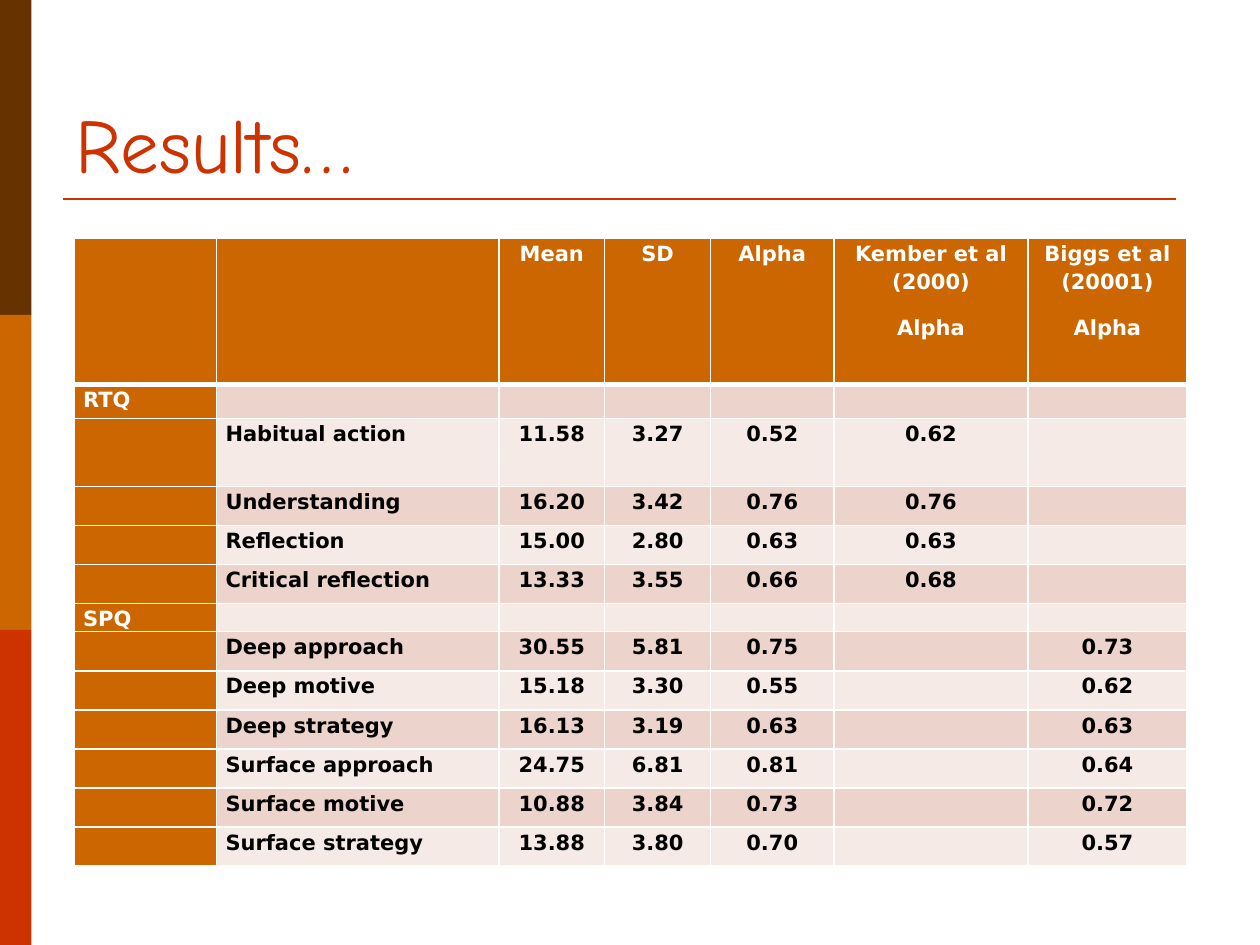
"""Build the Results slide: a table of questionnaire scale statistics."""
from dataclasses import dataclass

from lxml.etree import SubElement
from pptx import Presentation
from pptx.dml.color import RGBColor as Rgb
from pptx.enum.shapes import MSO_CONNECTOR as Connector, MSO_SHAPE as Shape
from pptx.enum.text import MSO_ANCHOR as Anchor, PP_ALIGN as Align
from pptx.oxml.ns import qn
from pptx.util import Inches, Pt


@dataclass(frozen=True)
class Theme:
    brown: str = "663300"
    orange: str = "CC6600"
    red: str = "CC3300"
    white: str = "FFFFFF"
    black: str = "000000"
    bands: tuple[str, str] = ("ECD3CC", "F6EAE7")
    title_font: str = "Comic Neue"
    table_font: str = "DejaVu Sans"
    title_size: int = 44
    table_size: int = 12
    rule: float = 1.5
    grid: int = 1
    header_rule: int = 3


@dataclass(frozen=True)
class Scale:
    name: str
    mean: str
    sd: str
    alpha: str
    kember: str = ""
    biggs: str = ""
    height: float = 0.31

    def cells(self) -> tuple[str, ...]:
        return "", self.name, self.mean, self.sd, self.alpha, self.kember, self.biggs


@dataclass(frozen=True)
class Section:
    name: str
    height: float

    def cells(self) -> tuple[str, ...]:
        return (self.name,) + ("",) * 6


THEME = Theme()
COLUMN_WIDTHS = (1.13, 2.24, 0.84, 0.84, 0.98, 1.54, 1.26)
HEADER_HEIGHT = 1.16
HEADINGS = ("", "", "Mean", "SD", "Alpha", "Kember et al (2000)\nAlpha", "Biggs et al (20001)\nAlpha")
ROWS = (
    Section("RTQ", 0.27),
    Scale("Habitual action", "11.58", "3.27", "0.52", kember="0.62", height=0.54),
    Scale("Understanding", "16.20", "3.42", "0.76", kember="0.76"),
    Scale("Reflection", "15.00", "2.80", "0.63", kember="0.63"),
    Scale("Critical reflection", "13.33", "3.55", "0.66", kember="0.68"),
    Section("SPQ", 0.22),
    Scale("Deep approach", "30.55", "5.81", "0.75", biggs="0.73"),
    Scale("Deep motive", "15.18", "3.30", "0.55", biggs="0.62"),
    Scale("Deep strategy", "16.13", "3.19", "0.63", biggs="0.63"),
    Scale("Surface approach", "24.75", "6.81", "0.81", biggs="0.64"),
    Scale("Surface motive", "10.88", "3.84", "0.73", biggs="0.72"),
    Scale("Surface strategy", "13.88", "3.80", "0.70", biggs="0.57"),
)


def draw_side_bands(slide) -> None:
    for index, color in enumerate((THEME.brown, THEME.orange, THEME.red)):
        band = slide.shapes.add_shape(
            Shape.RECTANGLE, 0, Inches(2.5 * index), Inches(0.25), Inches(2.5))
        band.shadow.inherit = False
        band.fill.solid()
        band.fill.fore_color.rgb = Rgb.from_string(color)
        band.line.fill.background()


def draw_title_rule(slide) -> None:
    rule = slide.shapes.add_connector(
        Connector.STRAIGHT, Inches(0.5), Inches(1.58), Inches(9.33), Inches(1.58))
    rule.line.color.rgb = Rgb.from_string(THEME.red)
    rule.line.width = Pt(THEME.rule)
    SubElement(rule._element.spPr, qn("a:effectLst"))


def write_title(slide, text: str) -> None:
    title = slide.shapes.title
    title.left, title.top, title.width, title.height = map(Inches, (0.5, 0.3, 9, 1.25))
    title.text_frame.text = text
    title.text_frame.vertical_anchor = Anchor.BOTTOM
    heading = title.text_frame.paragraphs[0]
    heading.alignment = Align.LEFT
    heading.font.name = THEME.title_font
    heading.font.size = Pt(THEME.title_size)
    heading.font.color.rgb = Rgb.from_string(THEME.red)


def set_borders(cell, top: float, bottom: float) -> None:
    widths = {"a:lnL": THEME.grid, "a:lnR": THEME.grid, "a:lnT": top, "a:lnB": bottom}
    properties = cell._tc.get_or_add_tcPr()
    for tag, width in widths.items():
        border = SubElement(properties, qn(tag), w=str(Pt(width)))
        SubElement(SubElement(border, qn("a:solidFill")), qn("a:srgbClr"), val=THEME.white)


def write_cell(cell, text: str, color: str, alignment: Align) -> None:
    cell.margin_left = cell.margin_right = Inches(0.07)
    cell.margin_top = cell.margin_bottom = 0
    cell.text = text
    for paragraph in cell.text_frame.paragraphs:
        paragraph.alignment = alignment
        paragraph.line_spacing = 1.15
        paragraph.space_after = Pt(10)
        paragraph.font.name = THEME.table_font
        paragraph.font.size = Pt(THEME.table_size)
        paragraph.font.bold = True
        paragraph.font.color.rgb = Rgb.from_string(color)
        if not text:
            SubElement(paragraph._p, qn("a:endParaRPr"), sz=str(THEME.table_size * 100))


def draw_results(slide) -> None:
    heights = (HEADER_HEIGHT, *(row.height for row in ROWS))
    contents = (HEADINGS, *(row.cells() for row in ROWS))
    table = slide.shapes.add_table(
        len(contents), len(COLUMN_WIDTHS), Inches(0.59), Inches(1.89),
        Inches(sum(COLUMN_WIDTHS)), Inches(sum(heights))).table
    table.first_col = True
    for column, width in zip(table.columns, COLUMN_WIDTHS):
        column.width = Inches(width)
    for row_index, (height, texts) in enumerate(zip(heights, contents)):
        table.rows[row_index].height = Inches(height)
        for column_index, text in enumerate(texts):
            cell = table.cell(row_index, column_index)
            is_heading = row_index == 0 or column_index == 0
            set_borders(cell,
                        top=THEME.header_rule if row_index == 1 else THEME.grid,
                        bottom=THEME.header_rule if row_index == 0 else THEME.grid)
            cell.fill.solid()
            fill = THEME.orange if is_heading else THEME.bands[(row_index - 1) % 2]
            cell.fill.fore_color.rgb = Rgb.from_string(fill)
            write_cell(cell, text, THEME.white if is_heading else THEME.black,
                       Align.JUSTIFY if column_index < 2 else Align.CENTER)


def main() -> None:
    deck = Presentation()
    deck.slide_width, deck.slide_height = Inches(10), Inches(7.5)
    slide = deck.slides.add_slide(deck.slide_layouts[5])
    draw_side_bands(slide)
    draw_title_rule(slide)
    write_title(slide, "Results…")
    draw_results(slide)
    deck.save("out.pptx")


if __name__ == "__main__":
    main()
